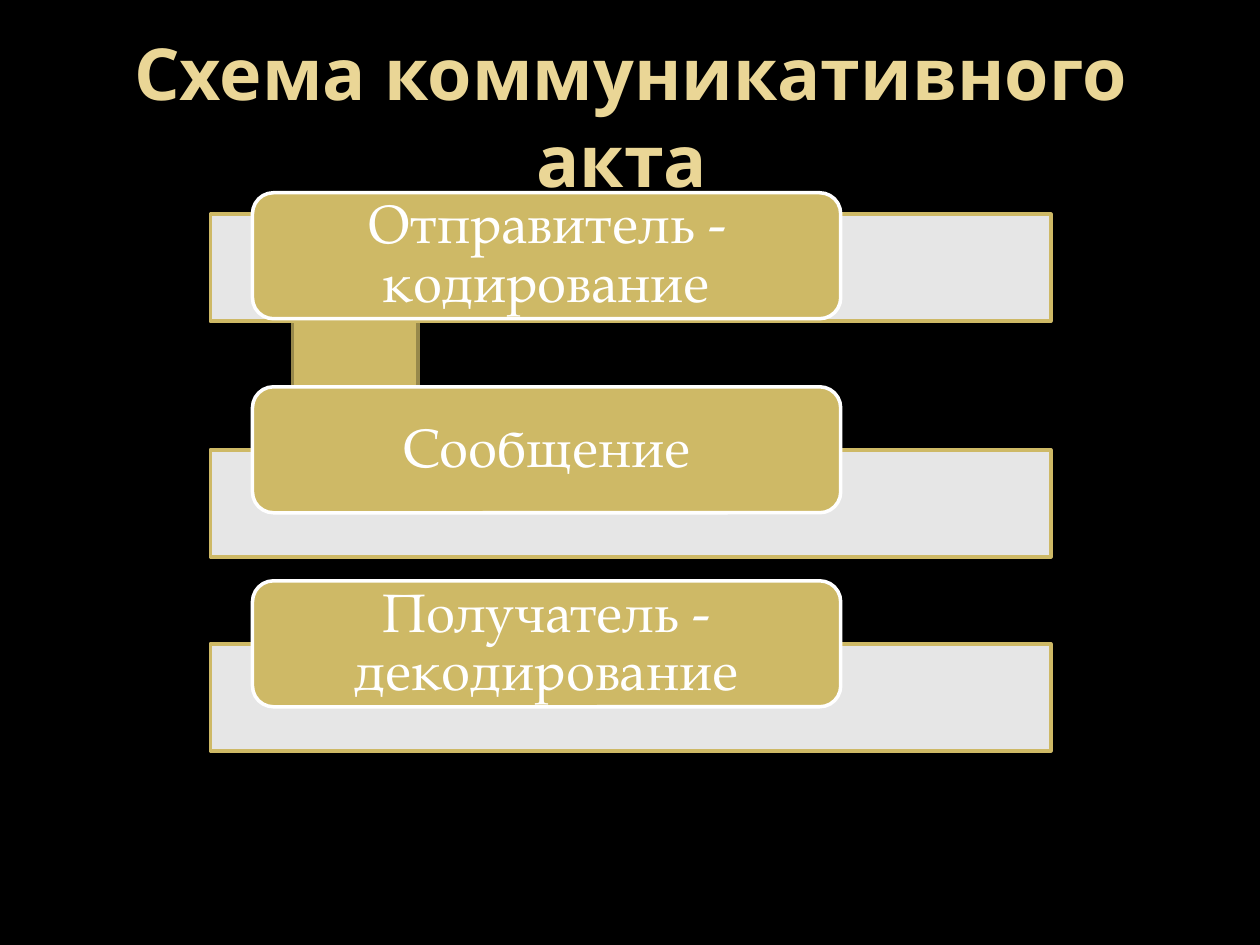
from dataclasses import dataclass

from lxml.etree import SubElement
from pptx import Presentation
from pptx.dml.color import RGBColor
from pptx.enum.shapes import MSO_SHAPE
from pptx.enum.text import MSO_ANCHOR, PP_ALIGN
from pptx.oxml.ns import qn
from pptx.util import Inches, Pt


@dataclass(frozen=True)
class Theme:
    back: str = "000000"
    gold: str = "CEB966"
    dark: str = "98894B"
    pale: str = "EAD696"
    white: str = "FFFFFF"
    head: str = "Noto Sans"
    body: str = "TeX Gyre Pagella"
    big: int = 41
    mid: int = 31
    edge: int = 2


THEME = Theme()

# Label and drop of its bar below the top of the box
STEPS = [
    ("Отправитель - кодирование", 0.17),
    ("Сообщение", 0.5),
    ("Получатель - декодирование", 0.5),
]


def write(shape, text, color, font, gap=1.0, pad=0.1, rim=0.05):
    frame = shape.text_frame
    form = {
        "word_wrap": True,
        "vertical_anchor": MSO_ANCHOR.MIDDLE,
        "margin_left": Inches(pad),
        "margin_right": Inches(pad),
        "margin_top": Inches(rim),
        "margin_bottom": Inches(rim),
    }
    for key, value in form.items():
        setattr(frame, key, value)
    para = frame.paragraphs[0]
    para.alignment = PP_ALIGN.CENTER
    para.line_spacing = gap
    run = para.add_run()
    run.text = text
    for key, value in font.items():
        setattr(run.font, key, value)
    run.font.color.rgb = RGBColor.from_string(color)


def block(slide, kind, box, fill, line, alpha=None):
    shape = slide.shapes.add_shape(kind, *map(Inches, box))
    shape.shadow.inherit = False
    shape.fill.solid()
    shape.fill.fore_color.rgb = RGBColor.from_string(fill)
    shape.line.color.rgb = RGBColor.from_string(line)
    shape.line.width = Pt(THEME.edge)
    if alpha is not None:
        # Fill opacity in percent
        tone = shape.fill._xPr.find(qn("a:solidFill"))[0]
        SubElement(tone, qn("a:alpha")).set("val", str(alpha * 1000))
    return shape


def title(slide, box, text):
    shape = slide.shapes.add_textbox(*map(Inches, box))
    font = {"name": THEME.head, "size": Pt(THEME.big), "bold": True}
    write(shape, text, THEME.pale, font)


def scheme(slide, box, steps):
    left, top, width, height = box
    size = 1
    pitch = (height - size) / (len(steps) - 1)
    inset = width * 0.05
    # Link between the first two steps
    block(slide, MSO_SHAPE.RECTANGLE, (left + 0.65, top + 0.88, size, size),
          THEME.gold, THEME.dark)
    font = {"name": THEME.body, "size": Pt(THEME.mid)}
    for row, (text, drop) in enumerate(steps):
        y = top + row * pitch
        # Bar behind, then the labelled box
        block(slide, MSO_SHAPE.RECTANGLE, (left, y + drop, width, 0.85),
              THEME.white, THEME.gold, 90)
        pill = block(slide, MSO_SHAPE.ROUNDED_RECTANGLE,
                     (left + inset, y, width * 0.7, size),
                     THEME.gold, THEME.white)
        write(pill, text, THEME.white, font, gap=0.9, pad=0.13, rim=0)


def main():
    deck = Presentation()
    deck.slide_width, deck.slide_height = Inches(10), Inches(7.5)
    slide = deck.slides.add_slide(deck.slide_layouts[6])
    back = slide.background.fill
    back.solid()
    back.fore_color.rgb = RGBColor.from_string(THEME.back)
    title(slide, (0.51, 0.29, 9, 1.25), "Схема коммуникативного акта ")
    scheme(slide, (1.67, 1.53, 6.67, 4.08), STEPS)
    deck.save("out.pptx")


if __name__ == "__main__":
    main()
